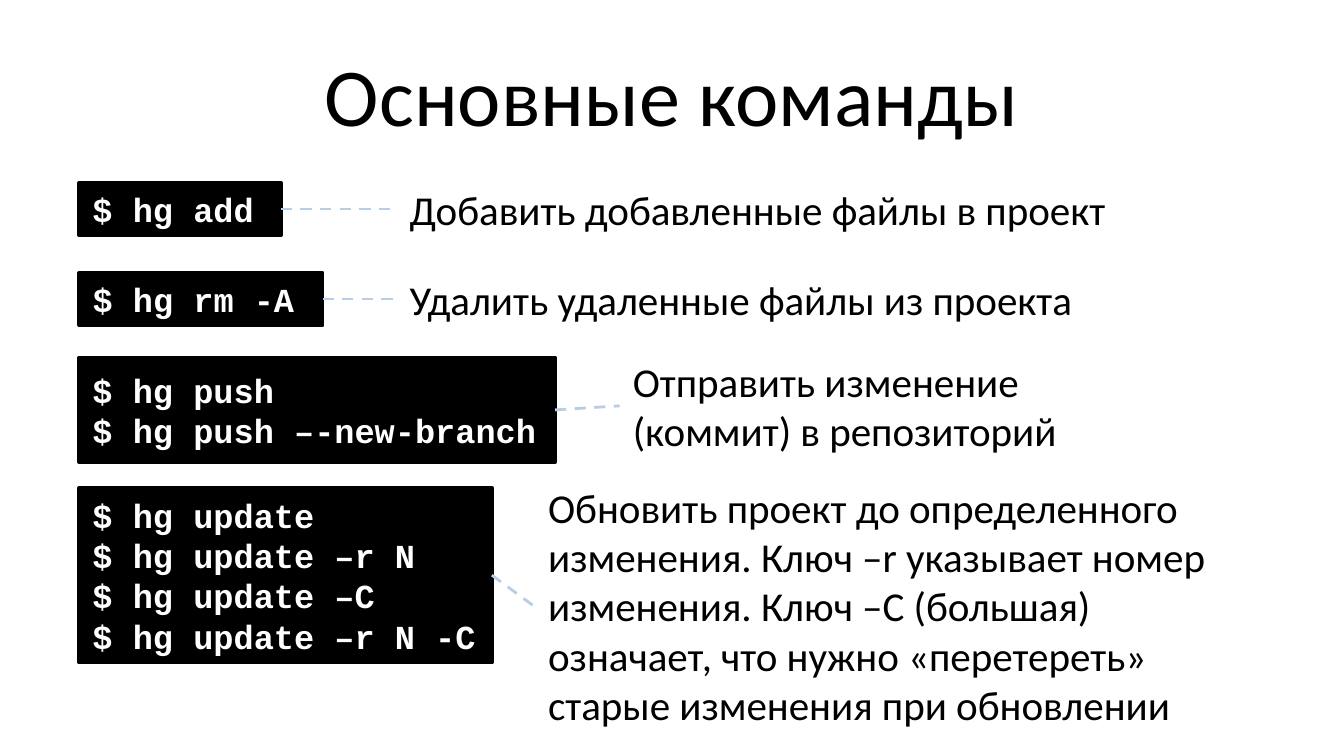
from lxml import etree
from pptx import Presentation
from pptx.dml.color import RGBColor
from pptx.enum.dml import MSO_LINE
from pptx.enum.shapes import MSO_CONNECTOR, MSO_SHAPE
from pptx.enum.text import MSO_ANCHOR, MSO_AUTO_SIZE, PP_ALIGN
from pptx.oxml.ns import qn
from pptx.util import Inches, Pt

RECTANGLE, STRAIGHT, DASH = MSO_SHAPE.RECTANGLE, MSO_CONNECTOR.STRAIGHT, MSO_LINE.DASH
TOP, MIDDLE = MSO_ANCHOR.TOP, MSO_ANCHOR.MIDDLE
LEFT, CENTER = PP_ALIGN.LEFT, PP_ALIGN.CENTER
GROW = MSO_AUTO_SIZE.SHAPE_TO_FIT_TEXT

# Content: frames are left, top, width, height in inches
PAGE_WIDTH = 10
PAGE_HEIGHT = PAGE_WIDTH * 9 / 16
TITLE = "Основные команды"
TITLE_FRAME = (0.5, 0.23, 9, 0.94)
COMMAND_LEFT = 0.59
COMMANDS = [
    {"lines": ["$ hg add"], "top": 1.36, "size": (1.5, 0.39),
     "note": "Добавить добавленные файлы в проект",
     "note_frame": (2.95, 1.32, 5.44, 0.47), "wrap": False},
    {"lines": ["$ hg rm -A"], "top": 2.03, "size": (1.81, 0.39),
     "note": "Удалить удаленные файлы из проекта",
     "note_frame": (2.95, 1.99, 5.19, 0.47), "wrap": False},
    {"lines": ["$ hg push", "$ hg push –-new-branch"],
     "top": 2.66, "size": (3.54, 0.78),
     "note": "Отправить изменение (коммит) в репозиторий",
     "note_frame": (4.61, 2.6, 3.62, 0.84), "wrap": True},
    {"lines": ["$ hg update", "$ hg update –r N", "$ hg update –C", "$ hg update –r N -C"],
     "top": 3.63, "size": (3.07, 1.3),
     "note": "Обновить проект до определенного изменения. Ключ –r указывает номер "
             "изменения. Ключ –С (большая) означает, что нужно «перетереть» "
             "старые изменения при обновлении",
     "note_frame": (3.98, 3.54, 5.28, 1.95), "wrap": True},
]

BLACK, WHITE, PALE_BLUE = (RGBColor.from_string(code) for code in ("000000", "FFFFFF", "B9CDE5"))
THEME = {
    "title": {"name": "Calibri", "size": Pt(44), "color": BLACK},
    "note": {"name": "Calibri", "size": Pt(22), "color": BLACK},
    "command": {"name": "Courier New", "size": Pt(18), "bold": True, "color": WHITE},
    "box_fill": BLACK,
    "box_border": {"color": BLACK, "width": Pt(2)},
    "link": {"color": PALE_BLUE, "width": Pt(1.5), "dash_style": DASH},
}


def apply_format(target, values):
    for name, value in values.items():
        if name == "color":
            target.color.rgb = value
        else:
            setattr(target, name, value)


def write(shape, lines, style, align=LEFT, **frame_values):
    frame = shape.text_frame
    apply_format(frame, frame_values)
    for index, line in enumerate(lines):
        para = frame.paragraphs[0] if index == 0 else frame.add_paragraph()
        para.alignment = align
        span = para.add_run()
        span.text = line
        apply_format(span.font, THEME[style])


def add_text(page, frame, text, style, **options):
    box = page.shapes.add_textbox(*map(Inches, frame))
    write(box, [text], style, **options)
    return box


def add_command(page, frame, lines):
    box = page.shapes.add_shape(RECTANGLE, *map(Inches, frame))
    box.shadow.inherit = False
    box.fill.solid()
    box.fill.fore_color.rgb = THEME["box_fill"]
    apply_format(box.line, THEME["box_border"])
    write(box, lines, "command", vertical_anchor=MIDDLE, word_wrap=True)
    return box


def add_link(page, box, note):
    """Join the middle of the box's right side to the middle of the note's left side."""
    link = page.shapes.add_connector(
        STRAIGHT, box.left + box.width, box.top + box.height // 2,
        note.left, note.top + note.height // 2)
    apply_format(link.line, THEME["link"])
    etree.SubElement(link.element.spPr, qn("a:effectLst"))


def main():
    deck = Presentation()
    deck.slide_width, deck.slide_height = Inches(PAGE_WIDTH), Inches(PAGE_HEIGHT)
    page = deck.slides.add_slide(deck.slide_layouts[6])

    # Title
    add_text(page, TITLE_FRAME, TITLE, "title", align=CENTER,
             vertical_anchor=MIDDLE, word_wrap=True)

    # Commands and their explanations
    pairs = []
    for command in COMMANDS:
        box = add_command(page, (COMMAND_LEFT, command["top"], *command["size"]),
                          command["lines"])
        note = add_text(page, command["note_frame"], command["note"], "note",
                        vertical_anchor=TOP, word_wrap=command["wrap"], auto_size=GROW)
        pairs.append((box, note))

    # Dashed links, in front of everything else
    for box, note in pairs:
        add_link(page, box, note)

    deck.save("out.pptx")


if __name__ == "__main__":
    main()
